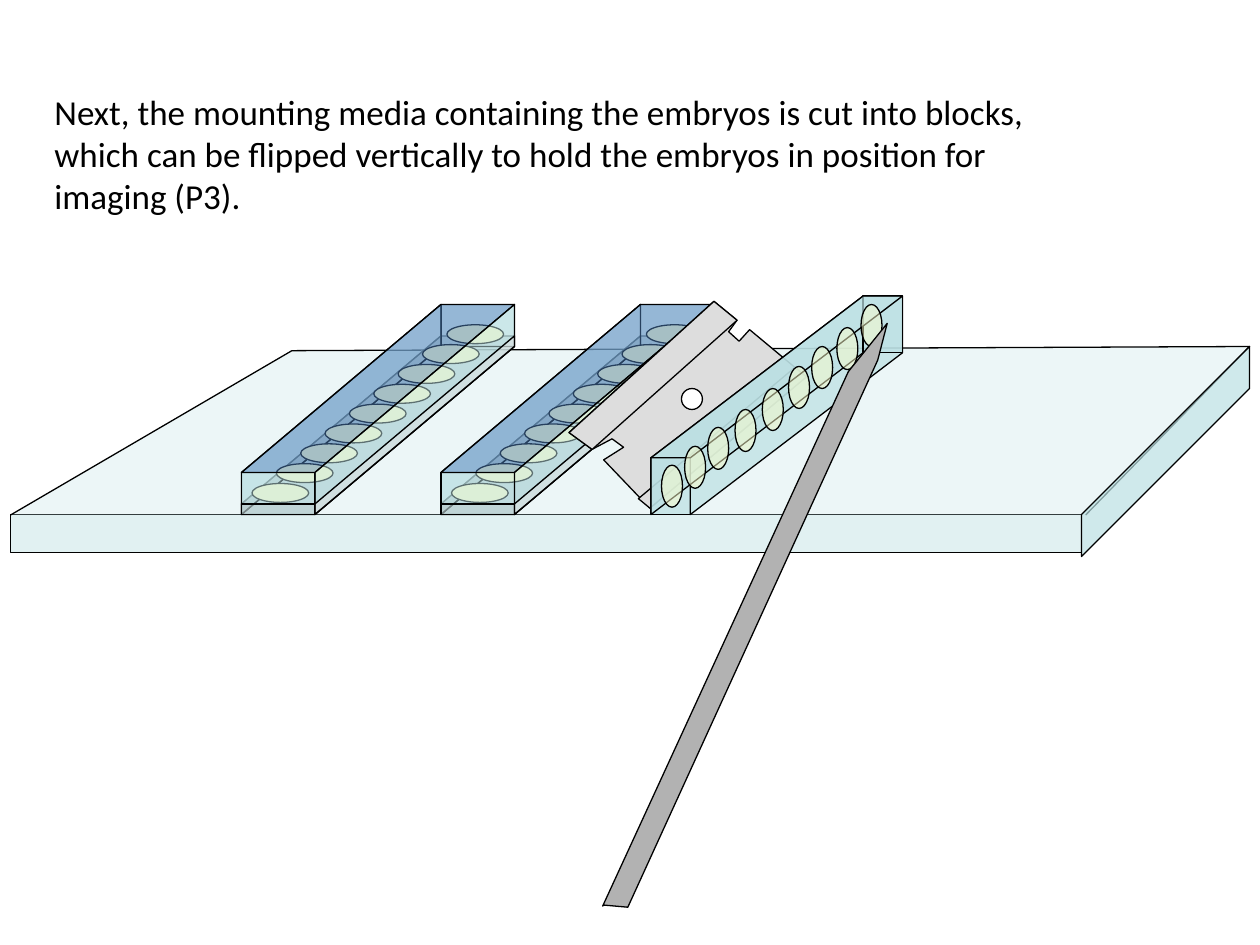
"""Build a slide showing embryo blocks being cut and flipped for imaging."""
import pptx
import pptx.dml.color
import pptx.enum.shapes
import pptx.enum.text
import pptx.oxml
import pptx.oxml.ns
import pptx.util

RGBColor = pptx.dml.color.RGBColor
BLACK = RGBColor(0x00, 0x00, 0x00)
WHITE = RGBColor(0xFF, 0xFF, 0xFF)
GEL = RGBColor(0xBB, 0xE0, 0xE3)
BLUE = RGBColor(0x4F, 0x81, 0xBD)
STEEL = RGBColor(0xB2, 0xB2, 0xB2)
SILVER = RGBColor(0xDD, 0xDD, 0xDD)
EMBRYO = RGBColor(0xFF, 0xFF, 0xCC)

COLUMNS, ROWS = 120, 90
CELL = pptx.util.Inches(10) // COLUMNS

CAPTION = (
    "Next, the mounting media containing the embryos is cut into blocks, "
    "which can be flipped vertically to hold the embryos in position for "
    "imaging (P3)."
)
BLADE = [
    (68, 28.7), (54.2, 41.2), (56.4, 42.8), (58.3, 41.8), (59.4, 42.6), (57.5, 43.8),
    (61.9, 48.4), (76.8, 35.9), (71.4, 31.4), (70.4, 32.5), (69.4, 31.6), (70.2, 30.5),
]
BLADE_EDGE = [(60.8, 47.5), (75.7, 35), (76.8, 35.9), (61.9, 48.4)]
BLADE_SPINE = [(54.2, 41.2), (56.4, 42.8), (70.2, 30.5), (68, 28.7)]
KNIFE = [(57.4, 86.3), (80.8, 35.4), (84.5, 30.8), (83.6, 34.3), (59.8, 86.4), (57.5, 86.2)]
FLIPPED_EMBRYOS = [
    (63, 44.3), (65.2, 42.5), (67.4, 40.7), (70, 39), (72.6, 37),
    (75.1, 34.9), (77.3, 33), (79.7, 31.2), (82, 29),
]


def cells(*values):
    """Turn grid cells into slide lengths."""
    return [pptx.util.Emu(round(value * CELL)) for value in values]


def paint(shape, color, opacity=100):
    """Give a shape its fill, opacity and thin black outline."""
    shape.shadow.inherit = False
    shape.fill.solid()
    shape.fill.fore_color.rgb = color
    if opacity < 100:
        swatch = shape.fill._xPr.find(".//" + pptx.oxml.ns.qn("a:srgbClr"))
        alpha = pptx.oxml.parse_xml(
            f'<a:alpha {pptx.oxml.ns.nsdecls("a")} val="{opacity * 1000}"/>'
        )
        swatch.append(alpha)
    shape.line.color.rgb = BLACK
    shape.line.width = pptx.util.Pt(0.75)


def polygon(shapes, points, color, opacity=100, close=True):
    """Draw an outline through grid points."""
    start, *rest = [cells(*point) for point in points]
    builder = shapes.build_freeform(*start)
    builder.add_line_segments(rest, close=close)
    paint(builder.convert_to_shape(), color, opacity)


def preset(shapes, kind, left, top, width, height, color, opacity=100):
    """Draw a preset shape on the grid."""
    shape = shapes.add_shape(kind, *cells(left, top, width, height))
    paint(shape, color, opacity)


def ellipse(shapes, *place_and_paint):
    """Draw an ellipse on the grid."""
    preset(shapes, pptx.enum.shapes.MSO_SHAPE.OVAL, *place_and_paint)


def prism_faces(left, top, width, height, depth, rise):
    """Return the named faces of a slanted bar."""
    right, bottom = left + width, top + height
    front = [(left, top), (right, top), (right, bottom), (left, bottom)]
    back = [(x + depth, y - rise) for x, y in front]

    def side(first, second):
        return [front[first], back[first], back[second], front[second]]

    return {
        "front": front, "back": back, "top": side(0, 1),
        "right": side(1, 2), "floor": side(2, 3), "left": side(3, 0),
    }


def slab(shapes):
    """Draw the front and top of the glass slab."""
    preset(shapes, pptx.enum.shapes.MSO_SHAPE.RECTANGLE, 1, 49, 102, 3.6, GEL, 44)
    top = [(1, 49.05), (27.8, 33.4), (119, 33), (103.4, 49.05)]
    polygon(shapes, top, GEL, 28, close=False)


def lying_block(page, left):
    """Draw a block on its glass strip with a row of embryos."""
    shapes = page.shapes.add_group_shape().shapes
    media = prism_faces(left, 45, 7, 4, 19, 16)
    glass = prism_faces(left, 48, 7, 1, 19, 16)
    for face in ("top", "left"):
        polygon(shapes, glass[face], STEEL, 50)
    for face in ("back", "floor", "left"):
        polygon(shapes, media[face], GEL, 50)
    for index in range(9):
        ellipse(shapes, left + 1 + 2.32 * index, 46.05 - 1.89 * index, 5.4, 1.8, EMBRYO)
    polygon(shapes, media["front"], GEL, 50)
    polygon(shapes, media["top"], BLUE, 50)
    polygon(shapes, media["right"], GEL, 50)
    polygon(shapes, glass["front"], STEEL, 30)
    polygon(shapes, glass["right"], SILVER, 50)


def razor_blade(page):
    """Draw the razor blade with its hole."""
    shapes = page.shapes.add_group_shape().shapes
    for outline in (BLADE, BLADE_EDGE, BLADE_SPINE):
        polygon(shapes, outline, SILVER)
    ellipse(shapes, 64.9, 37, 2, 2, WHITE)


def flipped_block(page):
    """Draw the upright block with its embryos."""
    shapes = page.shapes.add_group_shape().shapes
    faces = prism_faces(62, 43.6, 3.75, 5.4, 20.2, 15.4)
    for face in ("front", "right", "left", "back", "top"):
        polygon(shapes, faces[face], GEL, 70)
    for left, top in FLIPPED_EMBRYOS:
        ellipse(shapes, left, top, 2, 4, EMBRYO, 50)


def caption(shapes):
    """Write the explanation above the drawing."""
    box = shapes.add_textbox(*cells(4, 8, 100, 13.3))
    frame = box.text_frame
    frame.word_wrap = True
    frame.auto_size = pptx.enum.text.MSO_AUTO_SIZE.SHAPE_TO_FIT_TEXT
    span = frame.paragraphs[0].add_run()
    span.text = CAPTION
    span.font.name = "Calibri"
    span.font.size = pptx.util.Pt(20)
    span.font.color.rgb = BLACK


def main():
    """Build and save the deck."""
    deck = pptx.Presentation()
    deck.slide_width, deck.slide_height = cells(COLUMNS, ROWS)
    page = deck.slides.add_slide(deck.slide_layouts[6])
    slab(page.shapes)
    for left in (23, 42):
        lying_block(page, left)
    razor_blade(page)
    polygon(page.shapes, [(119, 33), (119, 37), (103, 53), (103, 49)], GEL, 70)
    flipped_block(page)
    polygon(page.shapes, KNIFE, STEEL)
    caption(page.shapes)
    deck.save("out.pptx")


if __name__ == "__main__":
    main()
